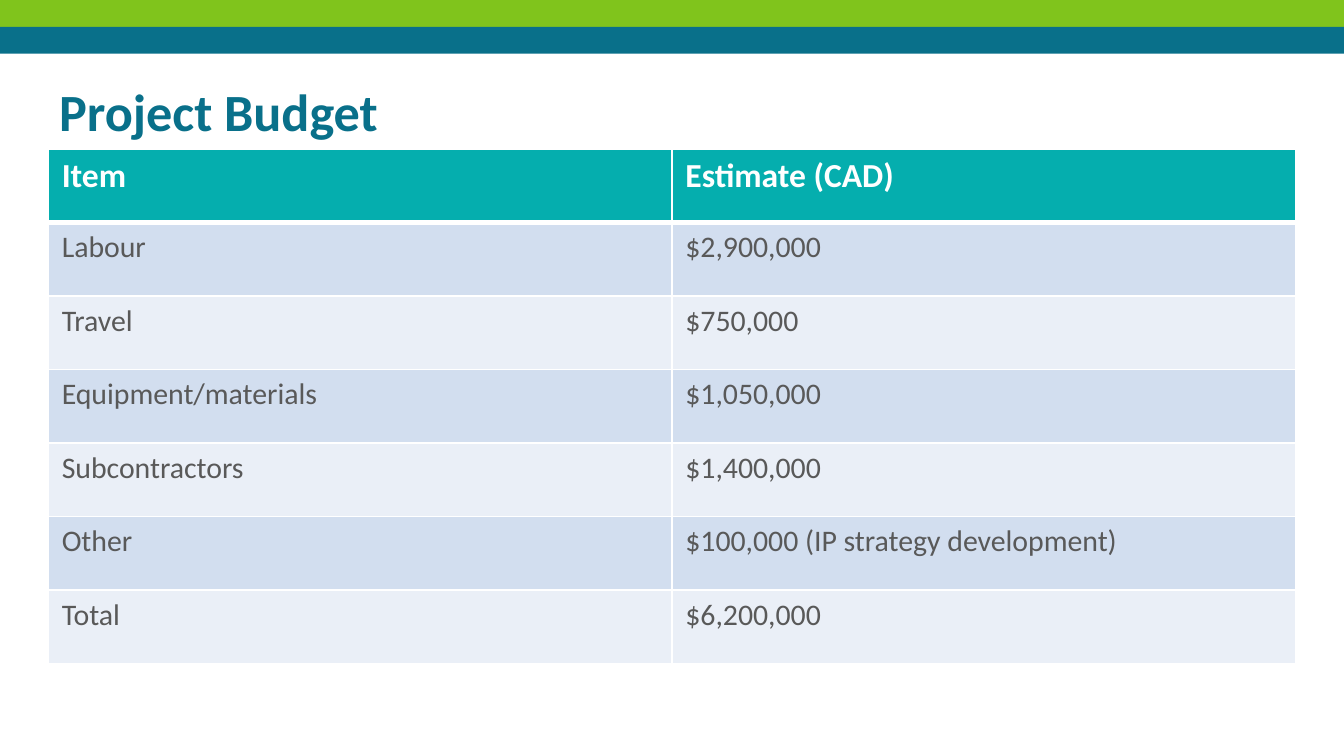
"""Build the project budget slide with a two-column table of estimates."""
import pptx
import pptx.dml.color
import pptx.enum.shapes
import pptx.enum.text
import pptx.oxml
import pptx.oxml.ns
import pptx.util

WHITE = pptx.dml.color.RGBColor(0xFF, 0xFF, 0xFF)
GREEN = pptx.dml.color.RGBColor(0x80, 0xC4, 0x1C)
BLUE = pptx.dml.color.RGBColor(0x09, 0x70, 0x8A)
TEAL = pptx.dml.color.RGBColor(0x05, 0xAE, 0xAE)
GREY = pptx.dml.color.RGBColor(0x59, 0x59, 0x59)
BANDS = (
    pptx.dml.color.RGBColor(0xEA, 0xEF, 0xF7),
    pptx.dml.color.RGBColor(0xD2, 0xDE, 0xEF),
)
BUDGET = (
    ("Item", "Estimate (CAD)"),
    ("Labour", "$2,900,000"),
    ("Travel", "$750,000"),
    ("Equipment/materials", "$1,050,000"),
    ("Subcontractors", "$1,400,000"),
    ("Other", "$100,000 (IP strategy development)"),
    ("Total", "$6,200,000"),
)


def add_run(paragraph, text, size, color, bold):
    run = paragraph.add_run()
    run.text = text
    run.font.name = "Calibri"
    run.font.size = pptx.util.Pt(size)
    run.font.bold = bold
    run.font.color.rgb = color


def add_border(cell, side, width):
    line = pptx.oxml.parse_xml(
        f'<a:{side} {pptx.oxml.ns.nsdecls("a")} w="{pptx.util.Pt(width)}">'
        f'<a:solidFill><a:srgbClr val="{WHITE}"/></a:solidFill></a:{side}>'
    )
    cell._tc.get_or_add_tcPr().append(line)


presentation = pptx.Presentation()
presentation.slide_width = pptx.util.Inches(10)
presentation.slide_height = presentation.slide_width * 9 // 16
slide = presentation.slides.add_slide(presentation.slide_layouts[5])

band_height = pptx.util.Inches(0.2)
for index, color in enumerate((GREEN, BLUE)):
    band = slide.shapes.add_shape(
        pptx.enum.shapes.MSO_SHAPE.RECTANGLE,
        0, index * band_height, presentation.slide_width, band_height,
    )
    band.shadow.inherit = False
    band.fill.solid()
    band.fill.fore_color.rgb = color
    band.line.fill.background()

title = slide.shapes.title
title.left, title.top = pptx.util.Inches(0.34), pptx.util.Inches(0.49)
title.width, title.height = pptx.util.Inches(9.32), pptx.util.Inches(0.63)
frame = title.text_frame
frame.margin_left = frame.margin_right = pptx.util.Inches(0.1)
frame.margin_top = frame.margin_bottom = pptx.util.Inches(0.1)
frame.vertical_anchor = pptx.enum.text.MSO_ANCHOR.TOP
frame.auto_size = pptx.enum.text.MSO_AUTO_SIZE.NONE
frame.word_wrap = True
frame.paragraphs[0].alignment = pptx.enum.text.PP_ALIGN.LEFT
add_run(frame.paragraphs[0], "Project Budget", 28, BLUE, True)

table = slide.shapes.add_table(
    len(BUDGET), len(BUDGET[0]),
    pptx.util.Inches(0.36), pptx.util.Inches(1.11),
    pptx.util.Inches(9.28), pptx.util.Inches(3.83),
).table
for row, entries in enumerate(BUDGET):
    header = row == 0
    for column, text in enumerate(entries):
        cell = table.cell(row, column)
        add_border(cell, "lnL", 1)
        add_border(cell, "lnR", 1)
        add_border(cell, "lnT", 3 if row == 1 else 1)
        add_border(cell, "lnB", 3 if header else 1)
        cell.fill.solid()
        cell.fill.fore_color.rgb = TEAL if header else BANDS[row % 2]
        add_run(
            cell.text_frame.paragraphs[0], text,
            18 if header else 16, WHITE if header else GREY, header,
        )

presentation.save("out.pptx")
